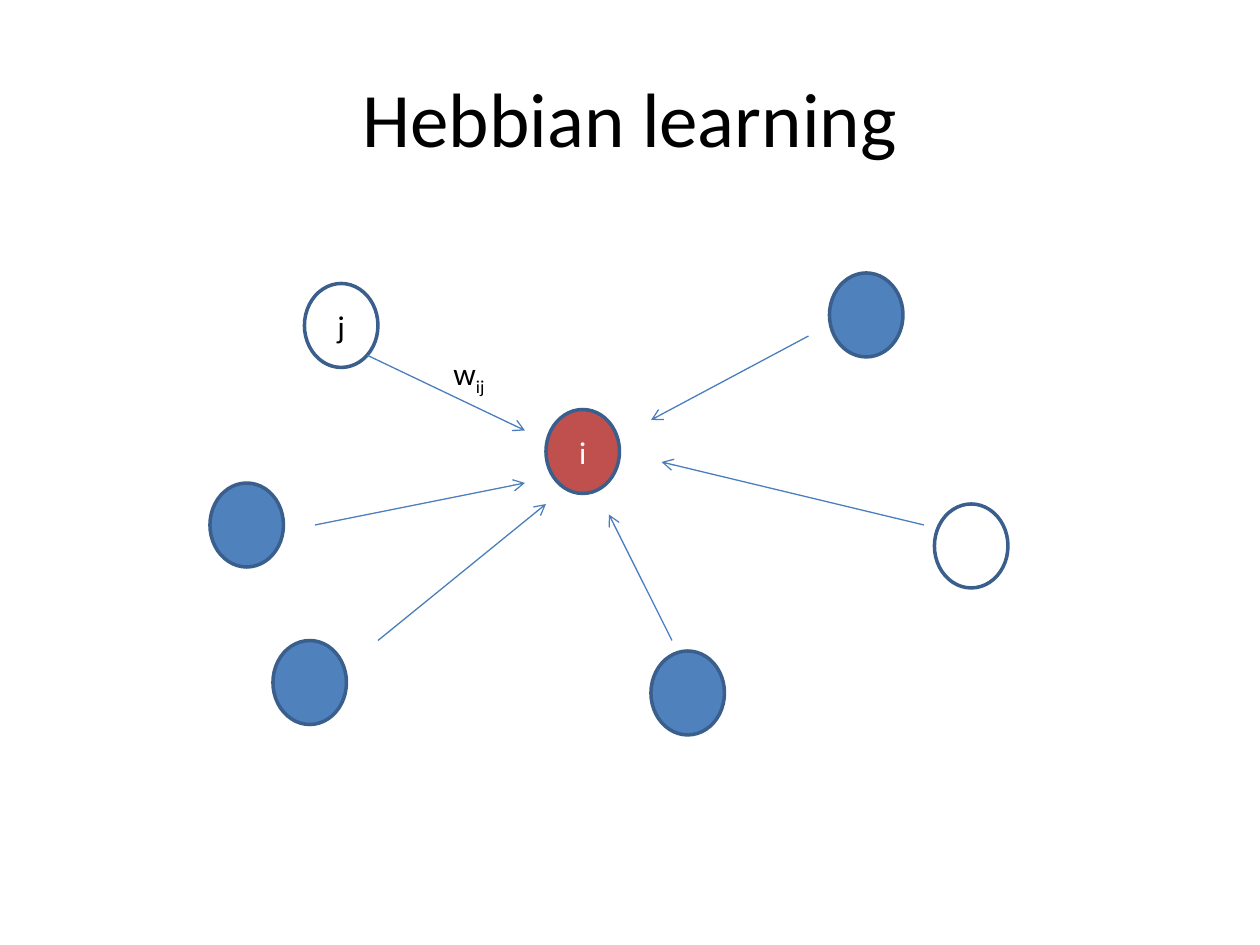
from typing import NamedTuple

from pptx import Presentation
from pptx.dml.color import RGBColor
from pptx.enum.shapes import MSO_CONNECTOR, MSO_SHAPE
from pptx.enum.text import MSO_ANCHOR as Anchor, PP_ALIGN as Align
from pptx.oxml.ns import qn
from pptx.util import Pt
from lxml.etree import SubElement

BLACK = RGBColor(0x00, 0x00, 0x00)
WHITE = RGBColor(0xFF, 0xFF, 0xFF)
BLUE = RGBColor(0x4F, 0x81, 0xBD)
RED = RGBColor(0xC0, 0x50, 0x4D)
OUTLINE = RGBColor(0x3A, 0x5F, 0x8C)
ARROW = RGBColor(0x4B, 0x7E, 0xBC)

NEURON_WIDTH, NEURON_HEIGHT = 42, 48


class Neuron(NamedTuple):
    left: float
    top: float
    fill: RGBColor = BLUE
    label: str = ""
    label_color: RGBColor = BLACK


class Synapse(NamedTuple):
    start_x: float
    start_y: float
    end_x: float
    end_y: float


NEURONS = [
    Neuron(156, 366),
    Neuron(312, 234, RED, "i", WHITE),
    Neuron(174, 162, WHITE, "j"),
    Neuron(474, 156),
    Neuron(372, 372),
    Neuron(120, 276),
    Neuron(534, 288, WHITE),
]
SYNAPSES = [
    Synapse(209.85, 203, 300, 246),
    Synapse(180, 300, 300, 276),
    Synapse(216, 366, 312, 288),
    Synapse(384, 366, 348, 294),
    Synapse(528, 300, 378, 264),
    Synapse(462, 192, 372, 240),
]


def write_text(shape, text: str, *, size: float = 18, color: RGBColor = BLACK,
               align: Align = Align.CENTER, anchor: Anchor = Anchor.MIDDLE,
               subscript: str = "", wrap: bool = True) -> None:
    frame = shape.text_frame
    frame.word_wrap = wrap
    frame.vertical_anchor = anchor
    paragraph = frame.paragraphs[0]
    paragraph.alignment = align
    for content, baseline in ((text, None), (subscript, "-25000")):
        if not content:
            continue
        run = paragraph.add_run()
        run.text = content
        run.font.name = "Calibri"
        run.font.size = Pt(size)
        run.font.color.rgb = color
        if baseline:
            run.font._element.set("baseline", baseline)


def draw_neuron(shapes, neuron: Neuron) -> None:
    shape = shapes.add_shape(MSO_SHAPE.OVAL, Pt(neuron.left), Pt(neuron.top),
                             Pt(NEURON_WIDTH), Pt(NEURON_HEIGHT))
    shape.shadow.inherit = False
    shape.fill.solid()
    shape.fill.fore_color.rgb = neuron.fill
    shape.line.color.rgb = OUTLINE
    shape.line.width = Pt(2)
    if neuron.label:
        write_text(shape, neuron.label, color=neuron.label_color)


def draw_synapse(shapes, synapse: Synapse) -> None:
    connector = shapes.add_connector(MSO_CONNECTOR.STRAIGHT, *map(Pt, synapse))
    connector.line.color.rgb = ARROW
    connector.line.width = Pt(0.75)
    SubElement(connector.line._get_or_add_ln(), qn("a:tailEnd"), type="arrow")
    SubElement(connector._element.spPr, qn("a:effectLst"))


def main() -> None:
    presentation = Presentation()
    presentation.slide_width, presentation.slide_height = Pt(720), Pt(540)
    slide = presentation.slides.add_slide(presentation.slide_layouts[6])

    title = slide.shapes.add_textbox(Pt(36), Pt(21.6), Pt(648), Pt(90))
    write_text(title, "Hebbian learning", size=44)

    network = slide.shapes.add_group_shape().shapes
    for neuron in NEURONS:
        draw_neuron(network, neuron)
    for synapse in SYNAPSES:
        draw_synapse(network, synapse)

    weight = slide.shapes.add_textbox(Pt(252), Pt(198.7), Pt(48), Pt(29))
    write_text(weight, "w", subscript="ij", align=Align.LEFT, anchor=Anchor.TOP)

    presentation.save("out.pptx")


if __name__ == "__main__":
    main()
